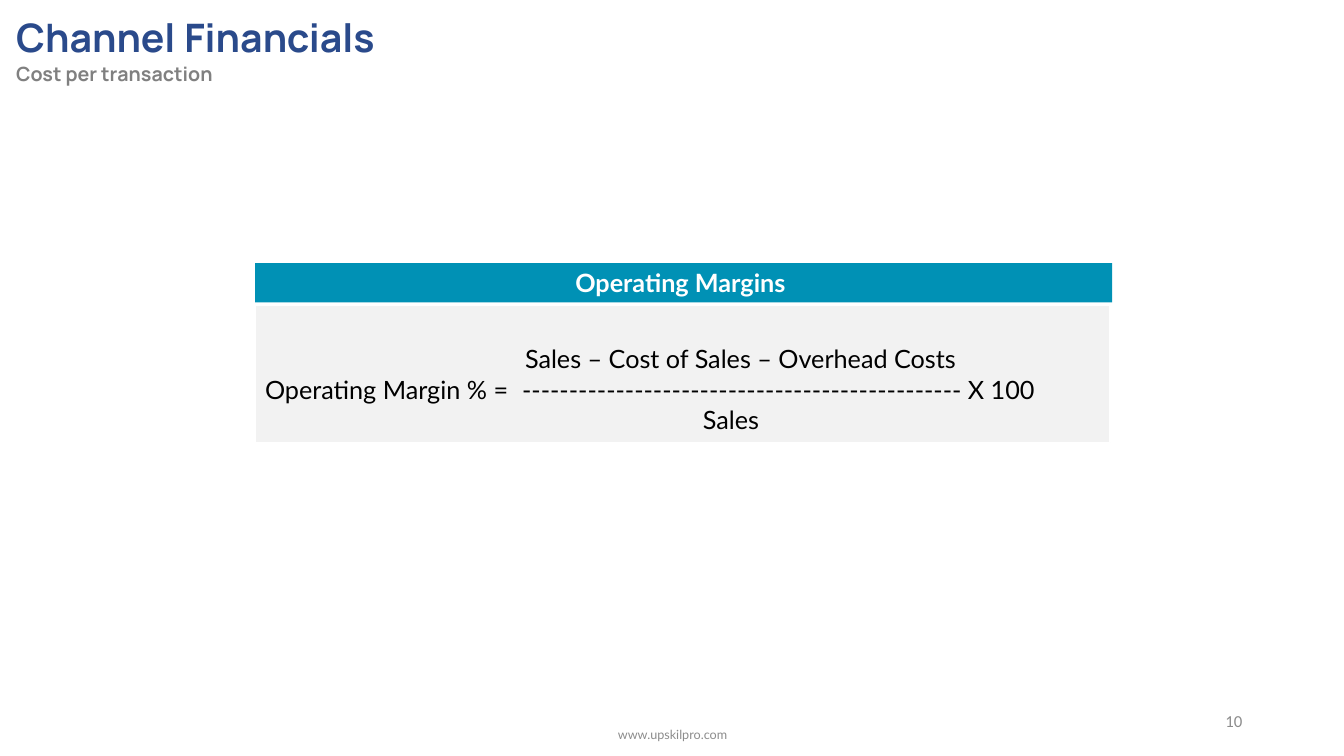
from dataclasses import dataclass

from lxml.etree import SubElement
from pptx import Presentation
from pptx.dml.color import RGBColor
from pptx.enum.shapes import MSO_SHAPE
from pptx.enum.text import MSO_ANCHOR, MSO_AUTO_SIZE, PP_ALIGN
from pptx.oxml.ns import qn
from pptx.util import Inches, Pt


@dataclass
class Line:
    text: str
    size: float
    color: str
    font: str = "Lato"
    bold: bool = False
    align: PP_ALIGN = PP_ALIGN.CENTER
    indent: float = 0
    tab: float = 0


@dataclass
class Box:
    left: float
    top: float
    width: float
    height: float
    lines: list[Line]
    fill: str = ""
    border: str = ""
    anchor: MSO_ANCHOR = MSO_ANCHOR.MIDDLE
    right_inset: float = 0.1
    bottom_inset: float = 0.05


def color_of(value: str) -> RGBColor:
    return RGBColor.from_string(value)


def format_line(para, line: Line) -> None:
    para.alignment = line.align
    properties = para._p.get_or_add_pPr()
    if line.indent:
        properties.set("marL", str(Inches(line.indent)))
        properties.set("indent", "0")
    if line.tab:
        tabs = SubElement(properties, qn("a:tabLst"))
        SubElement(tabs, qn("a:tab"), pos=str(Inches(line.tab)), algn="l")
    para.font.name = line.font
    para.font.size = Pt(line.size)
    para.font.bold = line.bold
    para.font.color.rgb = color_of(line.color)


def draw_box(page, box: Box) -> None:
    place = [Inches(n) for n in (box.left, box.top, box.width, box.height)]
    if box.fill:
        shape = page.shapes.add_shape(MSO_SHAPE.RECTANGLE, *place)
        shape.shadow.inherit = False
        shape.fill.solid()
        shape.fill.fore_color.rgb = color_of(box.fill)
        if box.border:
            shape.line.color.rgb = color_of(box.border)
            shape.line.width = Pt(1)
        else:
            shape.line.fill.background()
    else:
        shape = page.shapes.add_textbox(*place)
    frame = shape.text_frame
    frame.word_wrap = True
    frame.vertical_anchor = box.anchor
    frame.margin_right = Inches(box.right_inset)
    frame.margin_bottom = Inches(box.bottom_inset)
    for index, line in enumerate(box.lines):
        para = frame.add_paragraph() if index else frame.paragraphs[0]
        para.add_run().text = line.text
        format_line(para, line)


def draw_title(page) -> None:
    title = page.shapes.title
    title.left, title.top = Inches(0.06), Inches(0.03)
    title.width, title.height = Inches(8.61), Inches(0.88)
    frame = title.text_frame
    frame.vertical_anchor = MSO_ANCHOR.TOP
    frame.auto_size = MSO_AUTO_SIZE.NONE
    heading = frame.paragraphs[0]
    for text, size in (("Channel", 28), (" ", 32), ("Financials", 28)):
        span = heading.add_run()
        span.text = text
        span.font.size = Pt(size)
    format_line(heading, Line("", 28, "2A4A8B", "Manrope", True, PP_ALIGN.LEFT))
    subtitle = frame.add_paragraph()
    subtitle.add_run().text = "Cost per transaction"
    format_line(subtitle, Line("", 14, "808080", "Manrope", True, PP_ALIGN.LEFT))


BOXES = [
    Box(9.42, 6.95, 3, 0.4,
        [Line("10", 12, "8C8C8C", "Calibri", align=PP_ALIGN.RIGHT)]),
    Box(2.53, 2.61, 8.5, 0.39,
        [Line("Operating Margins", 18, "FFFFFF", bold=True)],
        fill="0091B5", right_inset=0.16),
    Box(2.53, 3.03, 8.48, 1.36,
        [Line("Sales – Cost of Sales – Overhead Costs", 18, "000000", indent=1.15),
         Line("Operating Margin % =\t" + "-" * 47 + " X 100", 18, "000000",
              align=PP_ALIGN.LEFT, tab=2.55),
         Line("Sales", 18, "000000", indent=0.96)],
        fill="F2F2F2", border="FFFFFF", anchor=MSO_ANCHOR.BOTTOM, bottom_inset=0.08),
    Box(4.42, 7.09, 4.5, 0.4, [Line("www.upskilpro.com", 9, "8C8C8C")]),
]


def main() -> None:
    deck = Presentation()
    deck.slide_width, deck.slide_height = Inches(13.33), Inches(7.5)
    page = deck.slides.add_slide(deck.slide_layouts[5])
    draw_title(page)
    for box in BOXES:
        draw_box(page, box)
    deck.save("out.pptx")


if __name__ == "__main__":
    main()
